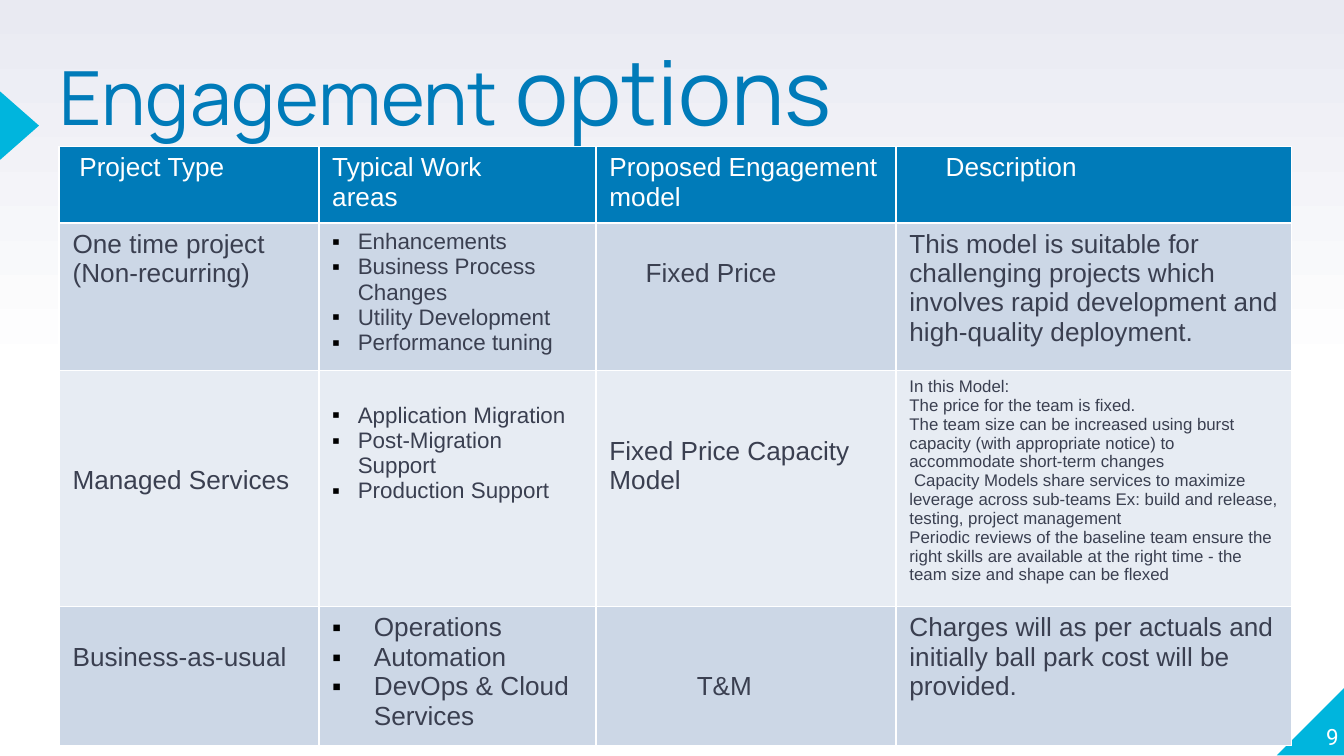
import dataclasses
import lxml.etree
import pptx
import pptx.dml.color
import pptx.enum.shapes
import pptx.enum.text
import pptx.oxml.ns
import pptx.util

SHAPE = pptx.enum.shapes.MSO_SHAPE
ANCHOR = pptx.enum.text.MSO_ANCHOR
ALIGN = pptx.enum.text.PP_ALIGN


@dataclasses.dataclass(frozen=True)
class Theme:
    blue: str = "007BB9"
    cyan: str = "00B5DD"
    white: str = "FFFFFF"
    haze: str = "E9EAF2"
    ink: str = "3A3F50"
    black: str = "000000"
    bands: tuple = ("CCD7E6", "E7ECF3")
    head: str = "Manrope"
    body: str = "Arial"
    mark: str = "Roboto"
    big: int = 48
    title: int = 40
    text: int = 14
    list: int = 12
    note: int = 9


@dataclasses.dataclass(frozen=True)
class Entry:
    lines: tuple
    size: int = Theme.text
    skip: int = 0
    indent: float = 0
    bullet: bool = False


THEME = Theme()
WIDTH = pptx.util.Inches(10)
HEIGHT = WIDTH * 9 // 16
UNIT = WIDTH / 100
LEAD = 1.13

COLS = (19.3, 20.6, 22.3, 29.4)
ROWS = (5.5, 10.6, 16.9, 10)
HEADER = (
    Entry(("Project Type",), indent=0.05),
    Entry(("Typical Work", "areas")),
    Entry(("Proposed Engagement model",)),
    Entry(("Description",), indent=0.27),
)
MODELS = (
    (
        Entry(("One time project", "(Non-recurring)")),
        Entry(("Enhancements", "Business Process Changes", "Utility Development",
               "Performance tuning"), THEME.list, indent=0.19, bullet=True),
        Entry(("Fixed Price",), skip=1, indent=0.27),
        Entry(("This model is suitable for challenging projects which involves "
               "rapid development and high-quality deployment.",)),
    ),
    (
        Entry(("Managed Services",), skip=3),
        Entry(("Application Migration", "Post-Migration Support", "Production Support"),
              THEME.list, skip=1, indent=0.19, bullet=True),
        Entry(("Fixed Price Capacity Model",), skip=2),
        Entry(("In this Model:",
               "The price for the team is fixed.",
               "The team size can be increased using burst capacity (with appropriate "
               "notice) to accommodate short-term changes",
               " Capacity Models share services to maximize leverage across sub-teams "
               "Ex: build and release, testing, project management",
               "Periodic reviews of the baseline team ensure the right skills are "
               "available at the right time - the team size and shape can be flexed"),
              THEME.note),
    ),
    (
        Entry(("Business-as-usual",), skip=1),
        Entry(("Operations", "Automation", "DevOps & Cloud Services"),
              indent=0.31, bullet=True),
        Entry(("T&M",), skip=2, indent=0.65),
        Entry(("Charges will as per actuals and initially ball park cost will be "
               "provided.",)),
    ),
)


def color(code):
    return pptx.dml.color.RGBColor.from_string(code)


def scale(box):
    return [round(part * UNIT) for part in box]


def style(run, face, size, code):
    run.font.name = face
    run.font.size = pptx.util.Pt(size)
    run.font.bold = False
    run.font.color.rgb = color(code)


def clear(frame):
    frame.margin_left = frame.margin_top = 0
    frame.margin_right = frame.margin_bottom = 0
    frame.word_wrap = True


def indent(para, entry):
    props = para._p.get_or_add_pPr()
    inset = pptx.util.Inches(entry.indent)
    props.set("marL", str(inset))
    props.set("indent", str(-inset if entry.bullet else 0))
    if entry.bullet:
        tag = pptx.oxml.ns.qn
        tint = lxml.etree.SubElement(props, tag("a:buClr"))
        lxml.etree.SubElement(tint, tag("a:srgbClr"), val=THEME.black)
        lxml.etree.SubElement(props, tag("a:buFont"), typeface=THEME.body)
        lxml.etree.SubElement(props, tag("a:buChar"), char="▪")


def back(slide):
    fill = slide.background.fill
    fill.gradient()
    fill.gradient_angle = 90
    for stop, place, code in zip(fill.gradient_stops, (0.5, 1), (THEME.white, THEME.haze)):
        stop.position = place
        stop.color.rgb = color(code)


def wedge(slide, kind, box, turn):
    shape = slide.shapes.add_shape(kind, *scale(box))
    shape.rotation = turn
    shape.shadow.inherit = False
    shape.fill.solid()
    shape.fill.fore_color.rgb = color(THEME.cyan)
    shape.line.fill.background()


def title(slide, box):
    shape = slide.shapes.title
    shape.left, shape.top, shape.width, shape.height = scale(box)
    frame = shape.text_frame
    clear(frame)
    frame.auto_size = pptx.enum.text.MSO_AUTO_SIZE.NONE
    frame.vertical_anchor = ANCHOR.TOP
    para = frame.paragraphs[0]
    para.alignment = ALIGN.LEFT
    para.line_spacing = 0.8
    for text, size in (("Engagement", THEME.title), (" options", THEME.big)):
        run = para.add_run()
        run.text = text
        style(run, THEME.head, size, THEME.blue)


def number(slide, box):
    frame = slide.shapes.add_textbox(*scale(box)).text_frame
    clear(frame)
    frame.vertical_anchor = ANCHOR.BOTTOM
    frame.text = "9"
    para = frame.paragraphs[0]
    para.alignment = ALIGN.RIGHT
    style(para.runs[0], THEME.mark, THEME.list, THEME.white)


def write(cell, entry, back, ink):
    cell.fill.solid()
    cell.fill.fore_color.rgb = color(back)
    cell.margin_top = pptx.util.Inches(0.05) + pptx.util.Pt(entry.skip * entry.size * LEAD)
    cell.text_frame.text = "\n".join(entry.lines)
    for para in cell.text_frame.paragraphs:
        indent(para, entry)
        style(para.runs[0], THEME.body, entry.size, ink)


def grid(slide, box):
    left, top, width, height = box
    frame = slide.shapes.add_table(len(ROWS), len(COLS), *scale(box))
    table = frame.table
    for col, part in zip(table.columns, COLS):
        col.width = round(part / sum(COLS) * width * UNIT)
    for row, part in zip(table.rows, ROWS):
        row.height = round(part * UNIT)
    frame.height = round(height * UNIT)
    for r, line in enumerate((HEADER, *MODELS)):
        fill = THEME.bands[(r - 1) % 2] if r else THEME.blue
        ink = THEME.ink if r else THEME.white
        for c, entry in enumerate(line):
            write(table.cell(r, c), entry, fill, ink)


def main():
    deck = pptx.Presentation()
    deck.slide_width, deck.slide_height = WIDTH, HEIGHT
    slide = deck.slides.add_slide(deck.slide_layouts[5])
    back(slide)
    wedge(slide, SHAPE.RIGHT_TRIANGLE, (95, 51.1, 5.1, 5.1), 270)
    wedge(slide, SHAPE.ISOSCELES_TRIANGLE, (-1.1, 7.9, 5.1, 2.9), 90)
    title(slide, (4.4, 4.2, 75.9, 6.2))
    number(slide, (94.6, 50.7, 5, 5.1))
    grid(slide, (4.4, 10.9, 91.7, 44.5))
    deck.save("out.pptx")


if __name__ == "__main__":
    main()
